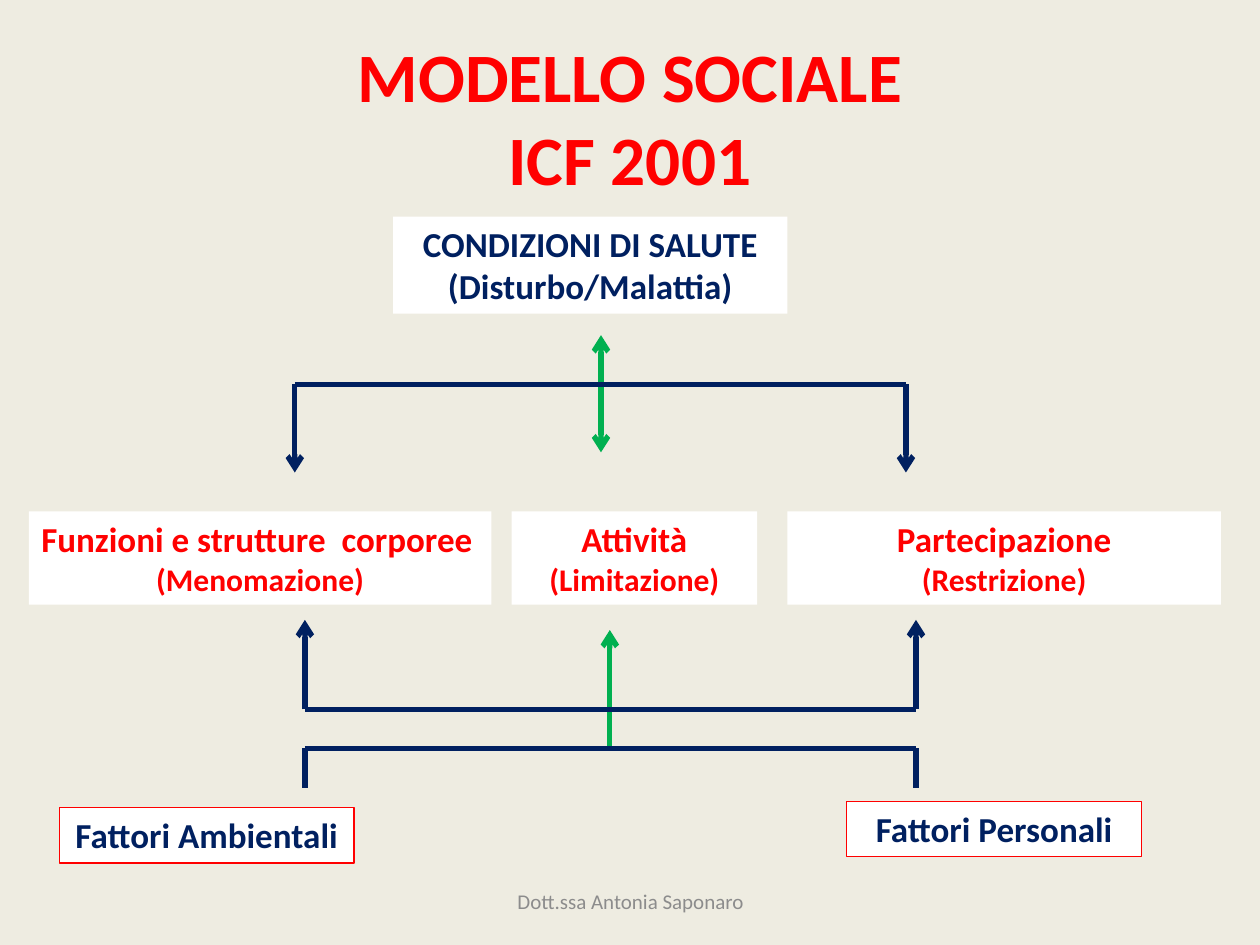
from lxml import etree
from pptx import Presentation
from pptx import util as u
from pptx.dml.color import RGBColor
from pptx.enum import shapes, text
from pptx.oxml import ns

HEX = {"back": "EEECE1", "red": "FF0000", "navy": "002060",
       "green": "00B050", "white": "FFFFFF", "grey": "8C8C8C"}
COL = {name: RGBColor.from_string(code) for name, code in HEX.items()}
LEFT, MID = text.PP_ALIGN.LEFT, text.PP_ALIGN.CENTER


def write(para, words, size, color, bold=True, align=MID):
    para.alignment = align
    for i, line in enumerate(words.split("\n")):
        if i:
            para.add_line_break()
        run = para.add_run()
        run.text = line
        run.font.name = "Calibri"
        run.font.size = u.Pt(size)
        run.font.bold = bold
        run.font.color.rgb = COL[color]


def link(x1, y1, x2, y2, color="navy", ends=()):
    line = slide.shapes.add_connector(
        shapes.MSO_CONNECTOR.STRAIGHT, *map(u.Inches, (x1, y1, x2, y2)))
    line.line.color.rgb = COL[color]
    line.line.width = u.Pt(3)
    props = line._element.spPr
    for end in ends:
        etree.SubElement(props.find(ns.qn("a:ln")), ns.qn("a:" + end), type="arrow")
    etree.SubElement(props, ns.qn("a:effectLst"))


prs = Presentation()
prs.slide_width, prs.slide_height = u.Inches(10), u.Inches(7.5)
slide = prs.slides.add_slide(prs.slide_layouts[5])
slide.background.fill.solid()
slide.background.fill.fore_color.rgb = COL["back"]

# Title
title = slide.shapes.title
title.left, title.top = u.Inches(0.5), u.Inches(0.3)
title.width, title.height = u.Inches(9), u.Inches(1.25)
title.text_frame.vertical_anchor = text.MSO_ANCHOR.MIDDLE
write(title.text_frame.paragraphs[0], "MODELLO SOCIALE\nICF 2001", 39.6, "red")

# Footer
foot = slide.shapes.add_textbox(*map(u.Inches, (3.42, 6.95, 3.17, 0.4)))
foot.text_frame.word_wrap = True
foot.text_frame.vertical_anchor = text.MSO_ANCHOR.MIDDLE
write(foot.text_frame.paragraphs[0], "Dott.ssa Antonia Saponaro", 12, "grey", False)

# Boxes: place, text colour, outline, lines of (words, size, alignment)
boxes = [
    ((3.12, 1.72, 3.13, 0.77), "navy", False,
     [("CONDIZIONI DI SALUTE", 20, MID), ("(Disturbo/Malattia)", 20, MID)]),
    ((0.23, 4.06, 3.67, 0.74), "red", False,
     [("Funzioni e strutture  corporee", 20, LEFT), ("(Menomazione)", 18, MID)]),
    ((4.06, 4.06, 1.95, 0.74), "red", False,
     [("Attività", 20, MID), ("(Limitazione)", 18, MID)]),
    ((6.25, 4.06, 3.44, 0.74), "red", False,
     [("Partecipazione", 20, MID), ("(Restrizione)", 18, MID)]),
    ((0.47, 6.41, 2.34, 0.44), "navy", True, [("Fattori Ambientali", 20, MID)]),
    ((6.72, 6.36, 2.34, 0.44), "navy", True, [("Fattori Personali", 20, MID)]),
]
for place, color, edge, lines in boxes:
    box = slide.shapes.add_shape(shapes.MSO_SHAPE.RECTANGLE, *map(u.Inches, place))
    box.shadow.inherit = False
    box.fill.solid()
    box.fill.fore_color.rgb = COL["white"]
    if edge:
        box.line.color.rgb = COL["red"]
        box.line.width = u.Pt(0.75)
    else:
        box.line.fill.background()
    frame = box.text_frame
    frame.word_wrap = True
    frame.auto_size = text.MSO_AUTO_SIZE.SHAPE_TO_FIT_TEXT
    frame.vertical_anchor = text.MSO_ANCHOR.TOP
    for i, (words, size, align) in enumerate(lines):
        para = frame.add_paragraph() if i else frame.paragraphs[0]
        write(para, words, size, color, align=align)

# Central arrows
link(4.77, 2.66, 4.77, 3.59, "green", ("headEnd", "tailEnd"))
link(4.84, 5.94, 4.84, 5, "green", ("tailEnd",))

# Brackets: a bar with a leg at each end
for x, bar, tip, ends in [(2.34, 3.05, 3.75, ("tailEnd",)),
                          (2.42, 5.63, 4.92, ("tailEnd",)),
                          (2.42, 5.94, 6.25, ())]:
    far = x + 4.85
    link(x, bar, far, bar)
    for leg in (x, far):
        link(leg, bar, leg, tip, ends=ends)

prs.save("out.pptx")
